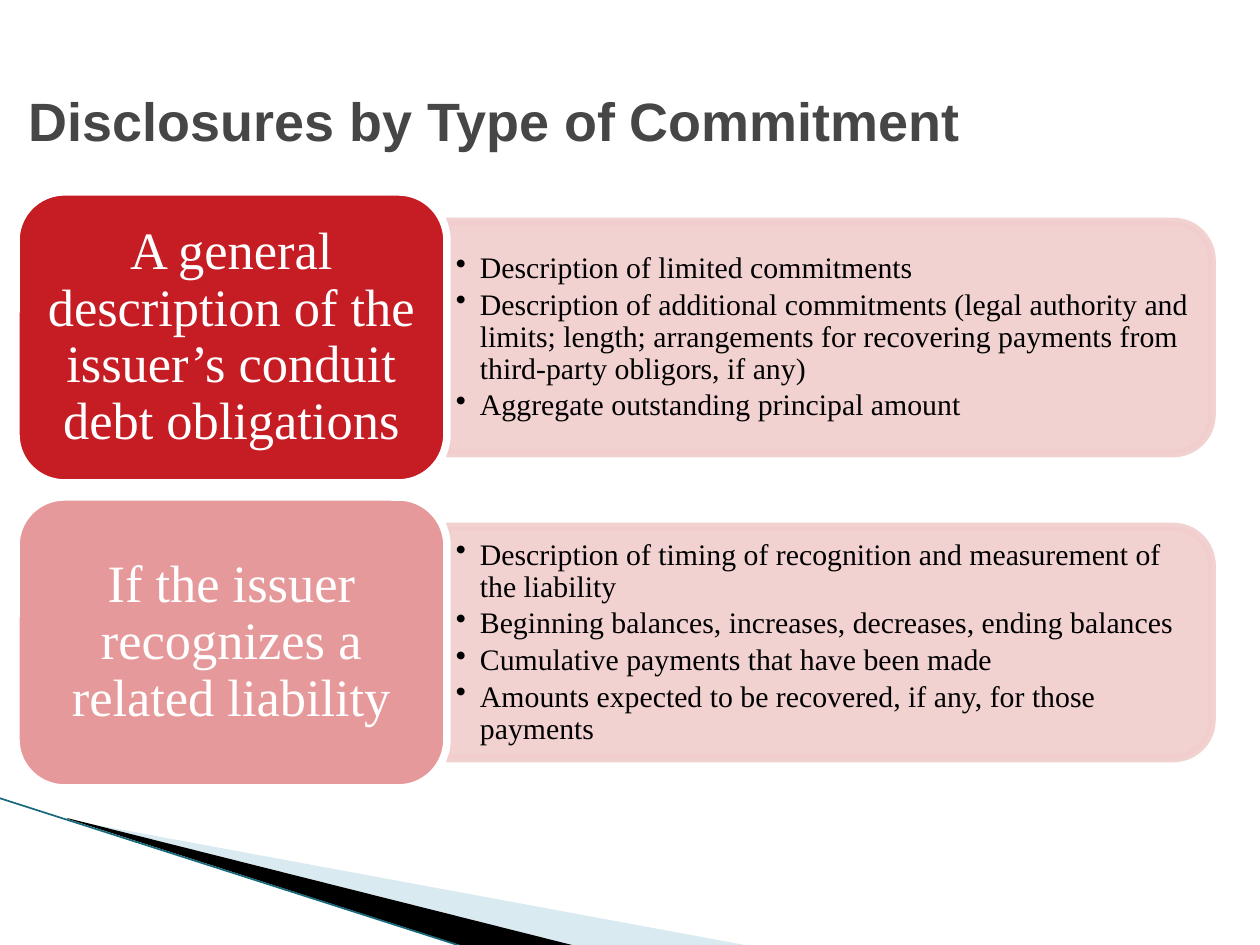
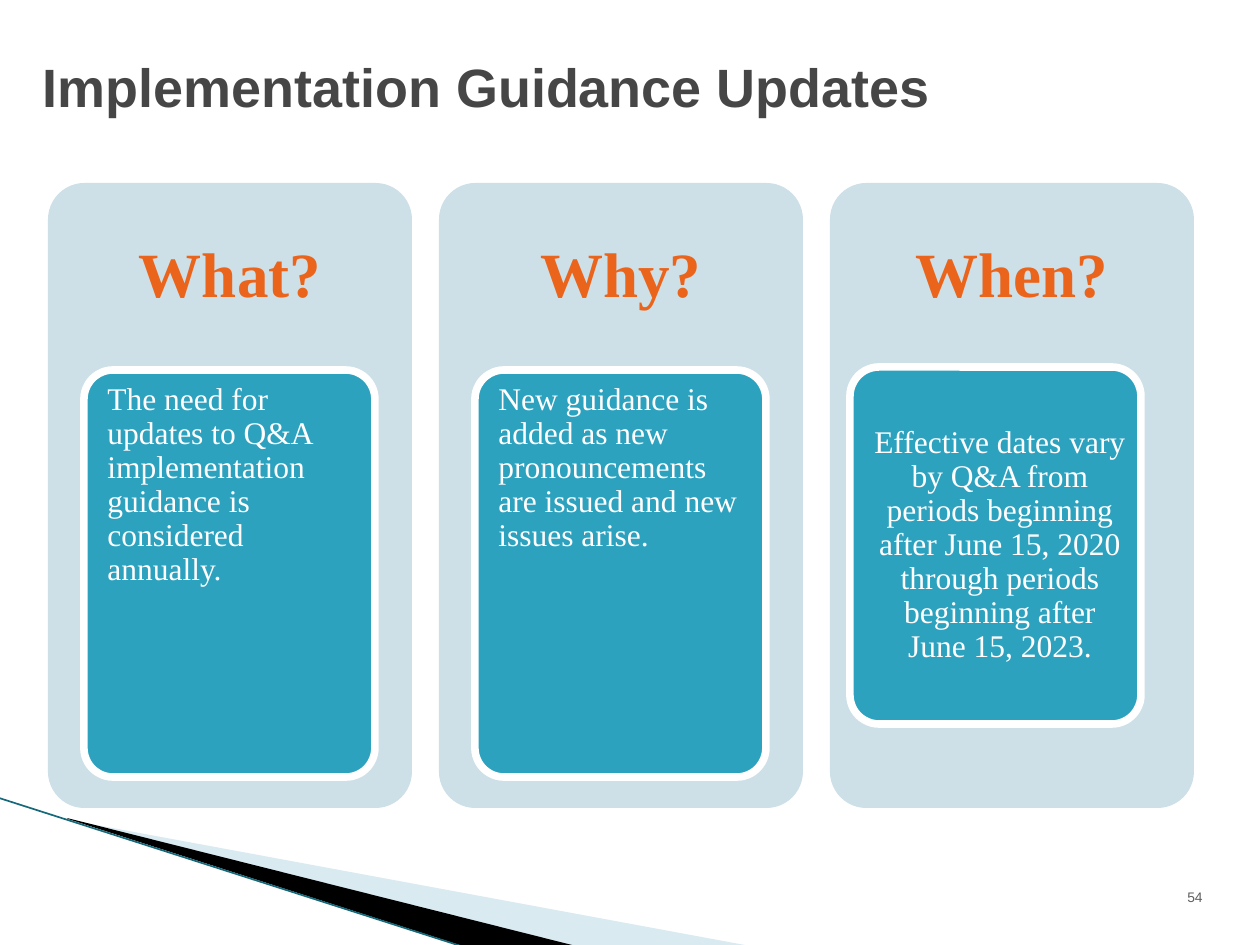
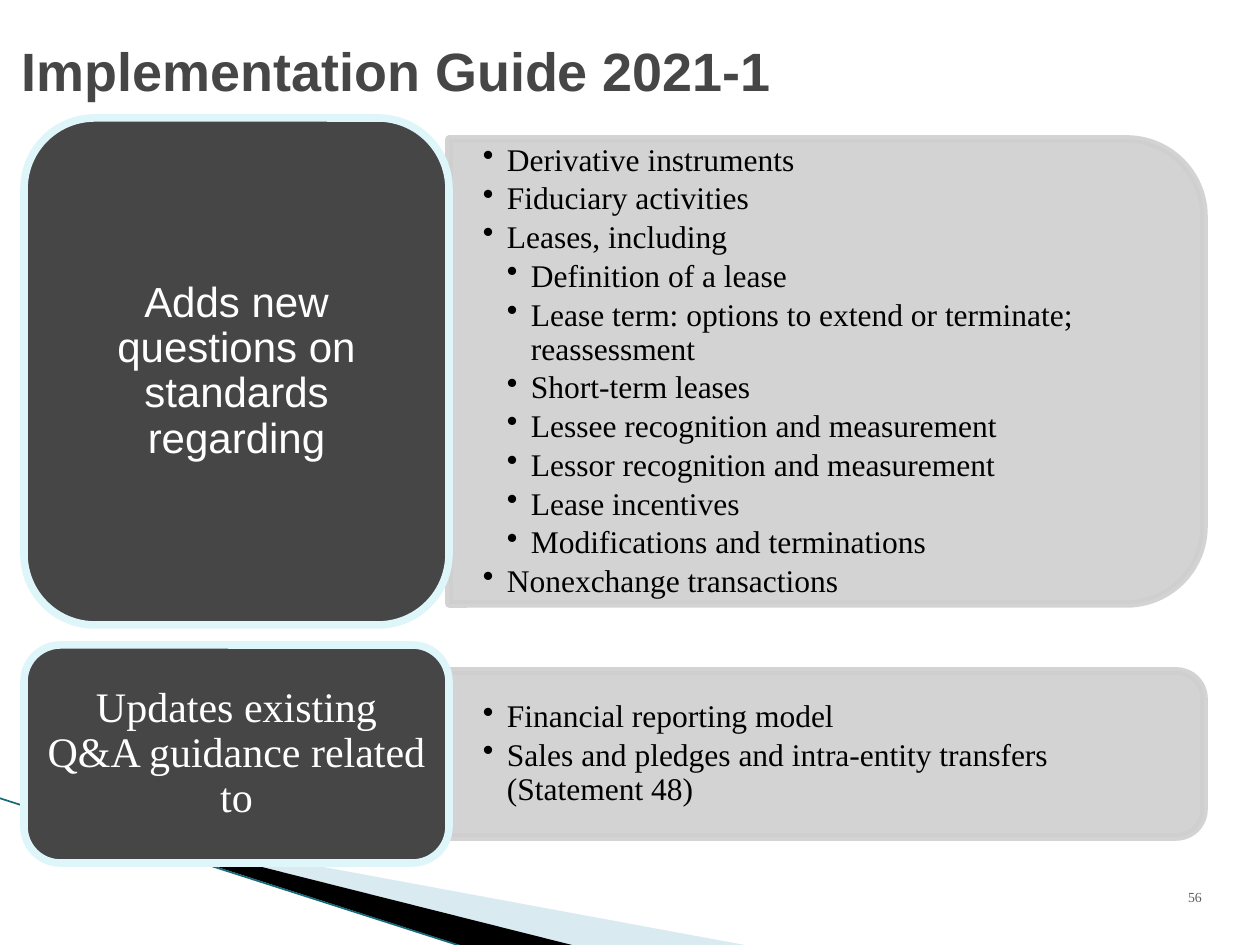
from dataclasses import dataclass

from lxml import etree
from pptx import Presentation
from pptx.dml.color import RGBColor
from pptx.enum.shapes import MSO_CONNECTOR, MSO_SHAPE
from pptx.enum.text import MSO_ANCHOR, PP_ALIGN
from pptx.oxml.ns import qn
from pptx.util import Pt

PX = 914400 / 126
ROUNDED = MSO_SHAPE.ROUNDED_RECTANGLE
ROUND_TOP = MSO_SHAPE.ROUND_2_SAME_RECTANGLE
STRAIGHT = MSO_CONNECTOR.STRAIGHT
TOP, MIDDLE = MSO_ANCHOR.TOP, MSO_ANCHOR.MIDDLE
LEFT, CENTER = PP_ALIGN.LEFT, PP_ALIGN.CENTER


@dataclass(frozen=True)
class Theme:
    sans: str = "Arial"
    serif: str = "Times New Roman"
    white: str = "FFFFFF"
    black: str = "000000"
    title: str = "464646"
    page: str = "5F5F5F"
    swoosh: str = "A0CBDC"
    swoosh_edge: str = "16697A"
    red: str = "C61C24"
    pink: str = "E6999A"
    blush: str = "F1CDCD"
    gray: str = "CFCFCF"
    ice: str = "DEF5FA"
    column: str = "CDE0E8"
    teal: str = "2DA2BF"
    orange: str = "EB641B"
    title_size: float = 30.8
    page_size: float = 7.9
    heading_size: int = 36
    card_size: int = 18
    border: float = 4.33
    edge: float = 0.95
    leading: float = 0.9
    bullet_gap: float = 0.15
    bullet_indent: int = 24
    corner_inset: float = 0.0488


THEME = Theme()


def px(length):
    return round(length * PX)


def set_alpha(color_format, percent):
    for color in color_format.iter(qn("a:srgbClr")):
        etree.SubElement(color, qn("a:alpha"), val=str(percent * 1000))


def paint(shape, fill, line=None, alpha=None):
    shape.shadow.inherit = False
    shape.fill.solid()
    shape.fill.fore_color.rgb = RGBColor.from_string(fill)
    if line:
        shape.line.color.rgb = RGBColor.from_string(line)
        shape.line.width = Pt(THEME.border)
    else:
        shape.line.fill.background()
    if alpha:
        set_alpha(shape._element.spPr, alpha)


def add_box(slide, kind, box, fill, line=None, alpha=None):
    shape = slide.shapes.add_shape(kind, *map(px, box))
    paint(shape, fill, line, alpha)
    return shape


def add_text_box(slide, box):
    return slide.shapes.add_textbox(*map(px, box))


def set_frame(shape, insets, anchor=MIDDLE):
    frame = shape.text_frame
    frame.word_wrap = True
    frame.vertical_anchor = anchor
    frame.margin_left, frame.margin_top, frame.margin_right, frame.margin_bottom = map(px, insets)
    return frame


def style(paragraph, size, color, font=THEME.serif, bold=False, align=LEFT, leading=THEME.leading):
    paragraph.alignment = align
    paragraph.line_spacing = leading
    for run in paragraph.runs:
        run.font.size = Pt(size)
        run.font.name = font
        run.font.bold = bold
        run.font.color.rgb = RGBColor.from_string(color)


def write(shape, text, insets, size, color, anchor=MIDDLE, **look):
    frame = set_frame(shape, insets, anchor)
    frame.text = text
    style(frame.paragraphs[0], size, color, **look)
    return frame.paragraphs[0]


def indent(paragraph, margin, hanging=0):
    properties = paragraph._p.get_or_add_pPr()
    properties.set("marL", str(px(margin)))
    properties.set("indent", str(-px(hanging)))
    return properties


def write_bullets(shape, bullets, insets, size):
    frame = set_frame(shape, insets)
    for position, (level, text) in enumerate(bullets):
        paragraph = frame.add_paragraph() if position else frame.paragraphs[0]
        paragraph.text = text
        properties = indent(paragraph, level * THEME.bullet_indent, THEME.bullet_indent)
        etree.SubElement(properties, qn("a:buChar"), char="•")
        paragraph.space_after = Pt(round(size * THEME.bullet_gap, 2))
        style(paragraph, size, THEME.black)


def add_swoosh(slide):
    bands = [
        ([(69, 820), (750, 946), (575, 946), (69, 819)], THEME.swoosh, 40),
        ([(67, 818), (576, 946), (469, 948), (68, 819)], THEME.black, None),
    ]
    for (start, *corners), color, alpha in bands:
        outline = slide.shapes.build_freeform(*start, scale=PX)
        outline.add_line_segments(corners)
        paint(outline.convert_to_shape(), color, alpha=alpha)
    edge = slide.shapes.add_connector(STRAIGHT, *map(px, (-1, 798, 467, 948)))
    edge.line.color.rgb = RGBColor.from_string(THEME.swoosh_edge)
    edge.line.width = Pt(THEME.edge)
    etree.SubElement(edge._element.spPr, qn("a:effectLst"))


def add_title(slide, box, text):
    write(add_text_box(slide, box), text, (13, 0, 0, 0), THEME.title_size, THEME.title,
          font=THEME.sans, bold=True, leading=1.0)


def add_page_number(slide, number, font):
    write(add_text_box(slide, (1130, 876, 130, 42)), number, (13, 6, 13, 6),
          THEME.page_size, THEME.page, font=font, align=CENTER, leading=1.0)


def add_panel(slide, box, color, bullets, insets, size):
    left, top, width, height = box
    turned = (left + (width - height) / 2, top + (height - width) / 2, height, width)
    add_box(slide, ROUND_TOP, turned, color, color, alpha=90).rotation = 90
    corner = round(height * THEME.corner_inset)
    area = (left, top + corner, width - corner, height - 2 * corner)
    write_bullets(add_text_box(slide, area), bullets, insets, size)


def add_topic_row(slide, box, label, bullets, look, fill, panel_height, font=THEME.serif):
    left, top, width, height = box
    label_width = look["label_width"]
    panel = (left + label_width, top + (height - panel_height) / 2, width - label_width, panel_height)
    add_panel(slide, panel, look["panel"], bullets, look["insets"], look["bullet_size"])
    topic = add_box(slide, ROUNDED, (left, top, label_width, height), fill, look["border"])
    size = look["label_size"]
    write(topic, label, (size // 2, size // 4) * 2, size, THEME.white, font=font, align=CENTER)


def add_question_column(slide, box, question, answer, card, anchor, align):
    left, top, width, height = box
    add_box(slide, ROUNDED, box, THEME.column).adjustments[0] = 0.1
    write(add_text_box(slide, (left, top, width, 188)), question, (19, 19, 19, 19),
          THEME.heading_size, THEME.orange, bold=True, align=CENTER)
    card_left, card_top, card_width, card_height = card
    answer_card = add_box(slide, ROUNDED, (left + card_left, top + card_top, card_width, card_height),
                          THEME.teal, THEME.white)
    answer_card.adjustments[0] = 0.1
    paragraph = write(answer_card, answer, (6, 5, 6, 5), THEME.card_size, THEME.white, anchor, align=align)
    indent(paragraph, 9)


def build_disclosures(slide):
    look = dict(label_width=431, panel=THEME.blush, border=THEME.white,
                insets=(9, 5, 9, 5), label_size=30, bullet_size=17)
    rows = [
        ("A general description of the issuer’s conduit debt obligations", THEME.red, [
            "Description of limited commitments",
            "Description of additional commitments (legal authority and limits; length; "
            "arrangements for recovering payments from third-party obligors, if any)",
            "Aggregate outstanding principal amount",
        ]),
        ("If the issuer recognizes a related liability", THEME.pink, [
            "Description of timing of recognition and measurement of the liability",
            "Beginning balances, increases, decreases, ending balances",
            "Cumulative payments that have been made",
            "Amounts expected to be recovered, if any, for those payments",
        ]),
    ]
    for row, (label, fill, details) in enumerate(rows):
        add_topic_row(slide, (16, 192 + row * 305, 1196, 291), label,
                      [(1, detail) for detail in details], look, fill, 232)
    add_title(slide, (16, 58, 1196, 123), "Disclosures by Type of Commitment")


def build_updates(slide):
    tall_card, short_card = (36, 187, 291, 407), (20, 184, 291, 357)
    columns = [
        ("What?", "The need for updates to Q&A implementation guidance is considered annually.",
         tall_card, TOP, LEFT),
        ("Why?", "New guidance is added as new pronouncements are issued and new issues arise.",
         tall_card, TOP, LEFT),
        ("When?", "Effective dates vary by Q&A from periods beginning after June 15, 2020 "
         "through periods beginning after June 15, 2023.", short_card, MIDDLE, CENTER),
    ]
    for index, column in enumerate(columns):
        add_question_column(slide, (48 + index * 391, 183, 364, 625), *column)
    add_title(slide, (30, 39, 1212, 93), "Implementation Guidance Updates")
    add_page_number(slide, "54", THEME.sans)


def build_guide(slide):
    look = dict(label_width=425, panel=THEME.gray, border=THEME.ice,
                insets=(34, 18, 34, 18), label_size=24, bullet_size=18)
    new_topics = [
        (1, "Derivative instruments"),
        (1, "Fiduciary activities"),
        (1, "Leases, including"),
        (2, "Definition of a lease"),
        (2, "Lease term: options to extend or terminate; reassessment"),
        (2, "Short-term leases"),
        (2, "Lessee recognition and measurement"),
        (2, "Lessor recognition and measurement"),
        (2, "Lease incentives"),
        (2, "Modifications and terminations"),
        (1, "Nonexchange transactions"),
    ]
    updated_topics = [
        (1, "Financial reporting model"),
        (1, "Sales and pledges and intra-entity transfers (Statement 48)"),
    ]
    add_topic_row(slide, (24, 118, 1180, 507), "Adds new questions on standards regarding",
                  new_topics, look, THEME.title, 465, THEME.sans)
    add_topic_row(slide, (24, 645, 1180, 218), "Updates existing Q&A guidance related to",
                  updated_topics, look, THEME.title, 166)
    add_title(slide, (9, 8, 1196, 123), "Implementation Guide 2021-1")
    add_page_number(slide, "56", THEME.serif)


def main():
    deck = Presentation()
    deck.slide_width, deck.slide_height = px(1260), px(945)
    for build in (build_disclosures, build_updates, build_guide):
        slide = deck.slides.add_slide(deck.slide_layouts[6])
        add_swoosh(slide)
        build(slide)
    deck.save("out.pptx")


if __name__ == "__main__":
    main()
